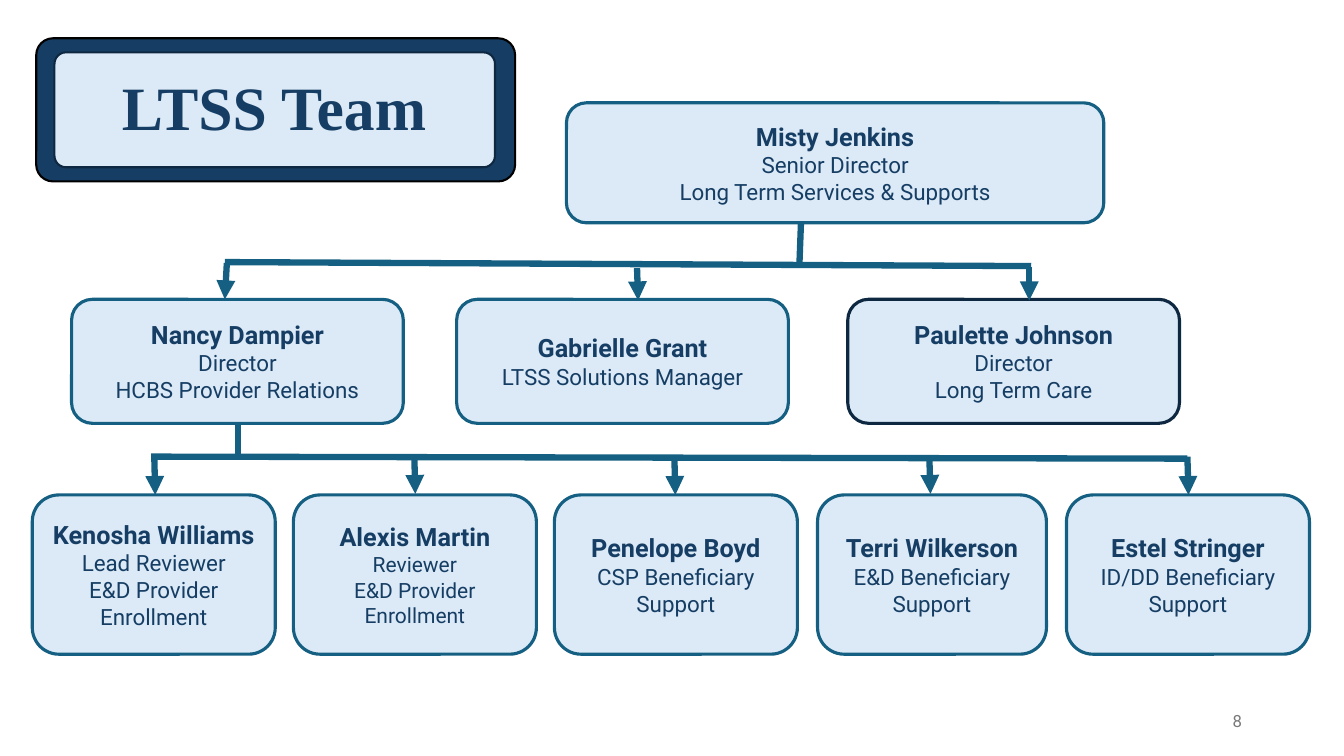
from dataclasses import dataclass
from typing import NamedTuple

from lxml.etree import SubElement
from pptx import Presentation
from pptx.dml.color import RGBColor
from pptx.enum.shapes import MSO_CONNECTOR, MSO_SHAPE
from pptx.enum.text import MSO_ANCHOR, MSO_AUTO_SIZE, PP_ALIGN
from pptx.oxml.ns import qn
from pptx.util import Inches, Pt


@dataclass(frozen=True)
class Theme:
    teal: str = "156082"
    navy: str = "0E2841"
    ink: str = "163E64"
    pale: str = "DCEAF7"
    gray: str = "797979"
    black: str = "000000"
    body_font: str = "Roboto"
    title_font: str = "Times New Roman"
    title_size: int = 44
    name_size: int = 18
    role_size: int = 16
    small_role_size: int = 15
    number_size: int = 12
    box_line: float = 2.25
    panel_line: float = 1.5
    link_line: float = 4.5


THEME = Theme()
WIDTH, HEIGHT = Inches(13.333), Inches(7.5)


class Area(NamedTuple):
    """Left, top, width and height in percent of the slide."""
    left: float
    top: float
    width: float
    height: float


class Link(NamedTuple):
    """Start and end points in percent of the slide."""
    x1: float
    y1: float
    x2: float
    y2: float


@dataclass(frozen=True)
class Member:
    area: Area
    name: str
    roles: tuple[str, ...]
    role_size: int = THEME.role_size
    border: str = THEME.teal


def director(left: float, name: str, *roles: str, **style) -> Member:
    return Member(Area(left, 39.6, 24.68, 16.4), name, roles, **style)


def staff(left: float, name: str, *roles: str, width: float = 18.08, **style) -> Member:
    return Member(Area(left, 65.47, width, 21.07), name, roles, **style)


MEMBERS = (
    Member(Area(42.15, 13.6, 39.98, 15.87), "Misty Jenkins",
           ("Senior Director", "Long Term Services & Supports")),
    director(5.33, "Nancy Dampier", "Director", "HCBS Provider Relations"),
    director(33.98, "Gabrielle Grant", "LTSS Solutions Manager"),
    director(63.08, "Paulette Johnson", "Director", "Long Term Care", border=THEME.navy),
    staff(2.4, "Kenosha Williams", "Lead Reviewer", "E&D Provider Enrollment"),
    staff(21.83, "Alexis Martin", "Reviewer", "E&D Provider Enrollment",
          role_size=THEME.small_role_size),
    staff(41.25, "Penelope Boyd", "CSP Beneficiary Support"),
    staff(60.83, "Terri Wilkerson", "E&D Beneficiary Support", width=17.03),
    staff(79.35, "Estel Stringer", "ID/DD Beneficiary Support"),
)
STEMS = (
    Link(11.25, 60.4, 88.35, 60.67),
    Link(17.7, 60.53, 17.7, 53.87),
    Link(59.48, 35.07, 59.63, 27.87),
)
DIRECTOR_BAR = Link(16.73, 34.67, 76.73, 35.2)
ARROWS = (
    Link(76.58, 35.33, 76.58, 39.73),
    Link(47.4, 35.47, 47.48, 39.73),
    Link(16.88, 34.8, 16.73, 39.6),
    Link(11.48, 60.27, 11.55, 65.47),
    Link(30.83, 60.27, 30.9, 65.33),
    Link(50.18, 60.53, 50.25, 65.47),
    Link(69.15, 60.53, 69.23, 65.33),
    Link(88.35, 60.4, 88.43, 65.47),
)


def across(share: float) -> int:
    return round(WIDTH * share / 100)


def down(share: float) -> int:
    return round(HEIGHT * share / 100)


def place(area: Area) -> tuple[int, int, int, int]:
    return across(area.left), down(area.top), across(area.width), down(area.height)


def add_text(frame, text: str, *, size: float, color: str = THEME.ink,
             font: str = THEME.body_font, bold: bool = False,
             align=PP_ALIGN.CENTER, spacing: float = 1.0) -> None:
    """Fill the empty first paragraph, or append a new one."""
    first = frame.paragraphs[0]
    para = frame.add_paragraph() if first.runs else first
    para.alignment = align
    para.line_spacing = spacing
    span = para.add_run()
    span.text = text
    span.font.size, span.font.name, span.font.bold = Pt(size), font, bold
    span.font.color.rgb = RGBColor.from_string(color)


def prepare_frame(frame) -> None:
    frame.word_wrap = True
    frame.auto_size = MSO_AUTO_SIZE.NONE
    frame.vertical_anchor = MSO_ANCHOR.MIDDLE


def add_box(page, area: Area, *, fill: str, border: str, weight: float,
            rounding: float = 0.1667):
    box = page.shapes.add_shape(MSO_SHAPE.ROUNDED_RECTANGLE, *place(area))
    box.adjustments[0] = rounding
    box.shadow.inherit = False
    box.fill.solid()
    box.fill.fore_color.rgb = RGBColor.from_string(fill)
    box.line.color.rgb = RGBColor.from_string(border)
    box.line.width = Pt(weight)
    prepare_frame(box.text_frame)
    return box


def add_member(page, member: Member) -> None:
    box = add_box(page, member.area, fill=THEME.pale, border=member.border,
                  weight=THEME.box_line)
    add_text(box.text_frame, member.name, size=THEME.name_size, bold=True)
    for role in member.roles:
        add_text(box.text_frame, role, size=member.role_size)


def add_link(page, link: Link, *, arrow: bool = False) -> None:
    line = page.shapes.add_connector(
        MSO_CONNECTOR.STRAIGHT, across(link.x1), down(link.y1),
        across(link.x2), down(link.y2))
    line.line.color.rgb = RGBColor.from_string(THEME.teal)
    line.line.width = Pt(THEME.link_line)
    if arrow:
        SubElement(line.line._get_or_add_ln(), qn("a:tailEnd"), type="triangle")
    SubElement(line._element.spPr, qn("a:effectLst"))


def add_title(page) -> None:
    add_box(page, Area(2.7, 5.07, 35.63, 18.93), fill=THEME.ink,
            border=THEME.black, weight=THEME.panel_line, rounding=0.117)
    add_box(page, Area(4.05, 6.93, 32.78, 15.2), fill=THEME.pale,
            border=THEME.navy, weight=THEME.panel_line, rounding=0.1)
    title = page.shapes.title
    title.left, title.top, title.width, title.height = place(Area(5.33, 5.07, 30.15, 19.07))
    prepare_frame(title.text_frame)
    add_text(title.text_frame, "LTSS Team", size=THEME.title_size,
             font=THEME.title_font, bold=True, spacing=0.9)
    page.shapes._spTree.append(title._element)  # bring the title above its panels


def add_page_number(page) -> None:
    box = page.shapes.add_textbox(*place(Area(70.65, 92.67, 22.5, 5.33)))
    prepare_frame(box.text_frame)
    add_text(box.text_frame, "8", size=THEME.number_size, color=THEME.gray,
             align=PP_ALIGN.RIGHT)


def main() -> None:
    deck = Presentation()
    deck.slide_width, deck.slide_height = WIDTH, HEIGHT
    page = deck.slides.add_slide(deck.slide_layouts[5])

    # Lines that run behind the boxes
    for stem in STEMS:
        add_link(page, stem)
    add_page_number(page)

    # Team boxes
    for member in MEMBERS:
        add_member(page, member)

    # Lines and arrows in front of the boxes
    add_link(page, DIRECTOR_BAR)
    for arrow in ARROWS:
        add_link(page, arrow, arrow=True)

    # Framed title
    add_title(page)
    deck.save("out.pptx")


if __name__ == "__main__":
    main()
